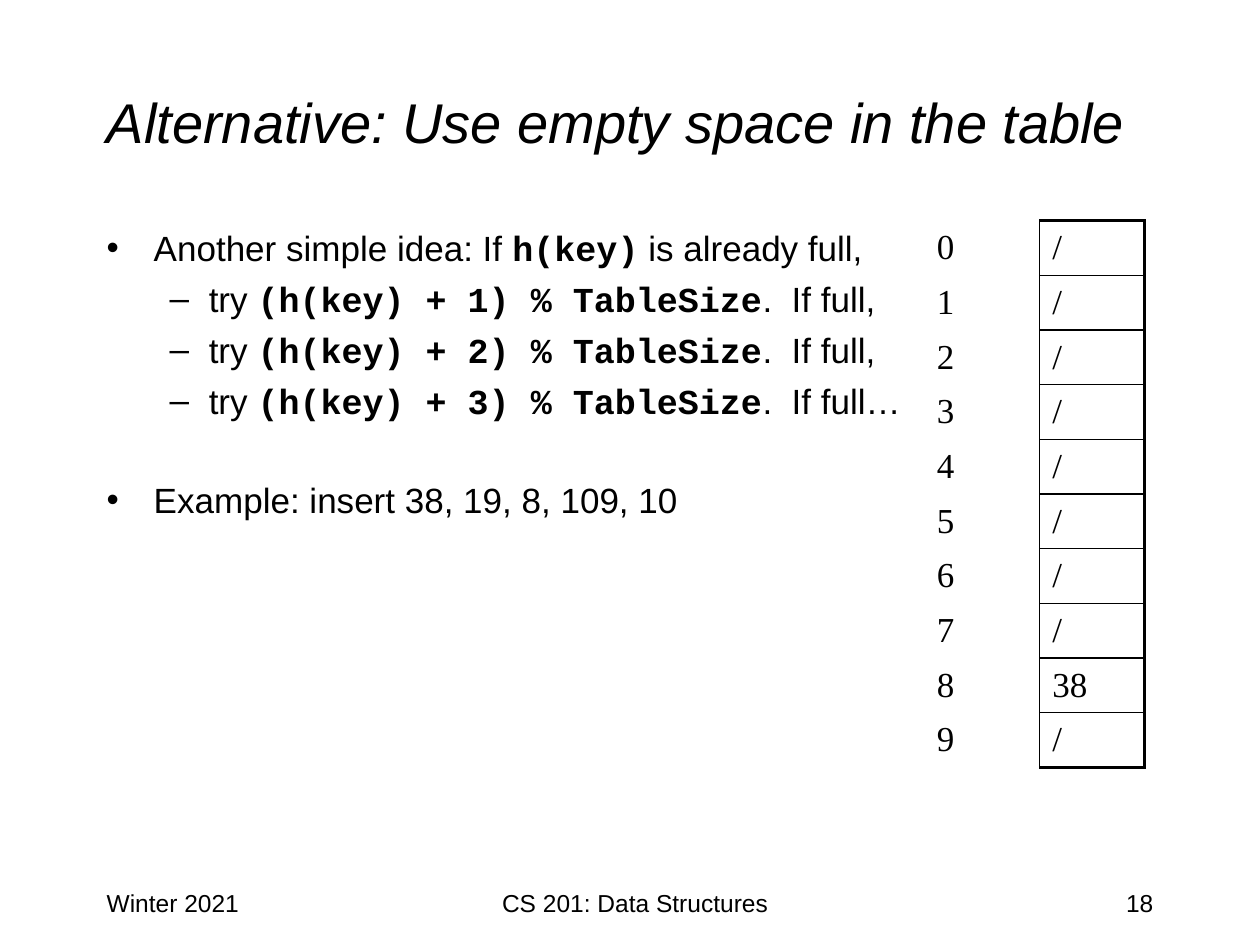
from dataclasses import dataclass

from lxml.etree import SubElement
from pptx import Presentation
from pptx.dml.color import RGBColor
from pptx.enum.text import MSO_ANCHOR as Anchor, MSO_AUTO_SIZE as AutoSize, PP_ALIGN as Align
from pptx.oxml import parse_xml
from pptx.oxml.ns import nsdecls, qn
from pptx.util import Cm, Pt

BLACK = "000000"
SANS, MONO, SERIF = "Arial", "Courier New", "Times New Roman"
THIN, THICK = 1, 2.25
LEFT, WIDTH = 1.9, 21.6


@dataclass
class Bullet:
    before: str
    code: str = ""
    after: str = ""
    level: int = 0
    space: float = 5


@dataclass
class FooterItem:
    text: str
    left: float
    width: float
    align: Align


@dataclass
class BulletStyle:
    mark: str
    margin: float
    hanging: float


BULLET_STYLES = [BulletStyle("•", 0.95, 0.95), BulletStyle("–", 2.06, 0.79)]
BULLETS = [
    Bullet("Another simple idea: If ", "h(key)", " is already full,"),
    *(Bullet("try ", f"(h(key) + {step}) % TableSize", f".  If full{end}", level=1)
      for step, end in ((1, ","), (2, ","), (3, "…"))),
    Bullet("Example: insert 38, 19, 8, 109, 10", space=33),
]
TABLE_SIZE = 10
STORED = {8: "38"}
FOOTER = [
    FooterItem("Winter 2021", LEFT, 5.3, Align.LEFT),
    FooterItem("CS 201: Data Structures", 8.04, 9.53, Align.CENTER),
    FooterItem("18", 18.2, 5.3, Align.RIGHT),
]


def set_font(font, name: str, size: float, color: str = BLACK) -> None:
    font.name = name
    font.size = Pt(size)
    font.color.rgb = RGBColor.from_string(color)


def add_text_frame(slide, left: float, top: float, width: float, height: float):
    frame = slide.shapes.add_textbox(Cm(left), Cm(top), Cm(width), Cm(height)).text_frame
    frame.word_wrap = True
    return frame


def add_title(slide, text: str) -> None:
    title = slide.shapes.title
    title.left, title.top, title.width, title.height = Cm(LEFT), Cm(0.85), Cm(WIDTH), Cm(3.18)
    frame = title.text_frame
    frame.text = text
    frame.vertical_anchor = Anchor.MIDDLE
    frame.auto_size = AutoSize.NONE
    paragraph = frame.paragraphs[0]
    paragraph.alignment = Align.LEFT
    set_font(paragraph.font, SANS, 32)
    paragraph.font.italic = True


def add_bullet(paragraph, bullet: Bullet) -> None:
    style = BULLET_STYLES[bullet.level]
    paragraph.level = bullet.level
    properties = paragraph._p.get_or_add_pPr()
    properties.set("marL", str(Cm(style.margin)))
    properties.set("indent", str(-Cm(style.hanging)))
    SubElement(properties, qn("a:buFont"), typeface=SANS)
    SubElement(properties, qn("a:buChar"), char=style.mark)
    paragraph.space_before = Pt(bullet.space)
    set_font(paragraph.font, SANS, 20)
    for text in (bullet.before, bullet.code, bullet.after):
        if text:
            run = paragraph.add_run()
            run.text = text
            if text == bullet.code:
                run.font.name = MONO
                run.font.bold = True


def add_bullets(slide, bullets: list[Bullet]) -> None:
    frame = add_text_frame(slide, LEFT, 4.45, WIDTH, 12.5)
    for index, bullet in enumerate(bullets):
        add_bullet(frame.add_paragraph() if index else frame.paragraphs[0], bullet)


def set_borders(cell, **widths: float) -> None:
    """Draw the sides named L, R, T and B in points; hide the others."""
    properties = cell._tc.get_or_add_tcPr()
    for index, side in enumerate("LRTB"):
        width = widths.get(side, 0)
        fill = (f'<a:solidFill><a:srgbClr val="{BLACK}"/></a:solidFill>'
                if width else "<a:noFill/>")
        properties.insert(index, parse_xml(
            f'<a:ln{side} {nsdecls("a")} w="{Pt(width)}">{fill}</a:ln{side}>'))


def fill_cell(cell, text: str) -> None:
    cell.text = text
    cell.vertical_anchor = Anchor.MIDDLE
    cell.fill.background()
    set_font(cell.text_frame.paragraphs[0].font, SERIF, 20)


def add_hash_table(slide) -> None:
    row_height, column_widths = 1.07, (2.33, 2.11)
    table = slide.shapes.add_table(
        TABLE_SIZE, 2, Cm(18.63), Cm(4.45),
        Cm(sum(column_widths)), Cm(row_height * TABLE_SIZE)).table
    table.first_row = table.horz_banding = False
    for column, width in zip(table.columns, column_widths):
        column.width = Cm(width)
    for index, row in enumerate(table.rows):
        row.height = Cm(row_height)
        key_cell, value_cell = row.cells
        fill_cell(key_cell, str(index))
        fill_cell(value_cell, STORED.get(index, "/"))
        set_borders(key_cell, R=THIN)
        set_borders(value_cell, L=THIN, R=THICK,
                    T=THICK if index == 0 else THIN,
                    B=THICK if index == TABLE_SIZE - 1 else THIN)


def add_footer_item(slide, item: FooterItem) -> None:
    frame = add_text_frame(slide, item.left, 17.78, item.width, 1.27)
    paragraph = frame.paragraphs[0]
    paragraph.text = item.text
    paragraph.alignment = item.align
    set_font(paragraph.font, SANS, 14)


def main() -> None:
    presentation = Presentation()
    presentation.slide_width, presentation.slide_height = Cm(25.4), Cm(19.05)
    slide = presentation.slides.add_slide(presentation.slide_layouts.get_by_name("Title Only"))
    add_title(slide, "Alternative: Use empty space in the table")
    add_bullets(slide, BULLETS)
    add_hash_table(slide)
    for item in FOOTER:
        add_footer_item(slide, item)
    presentation.save("out.pptx")


if __name__ == "__main__":
    main()
